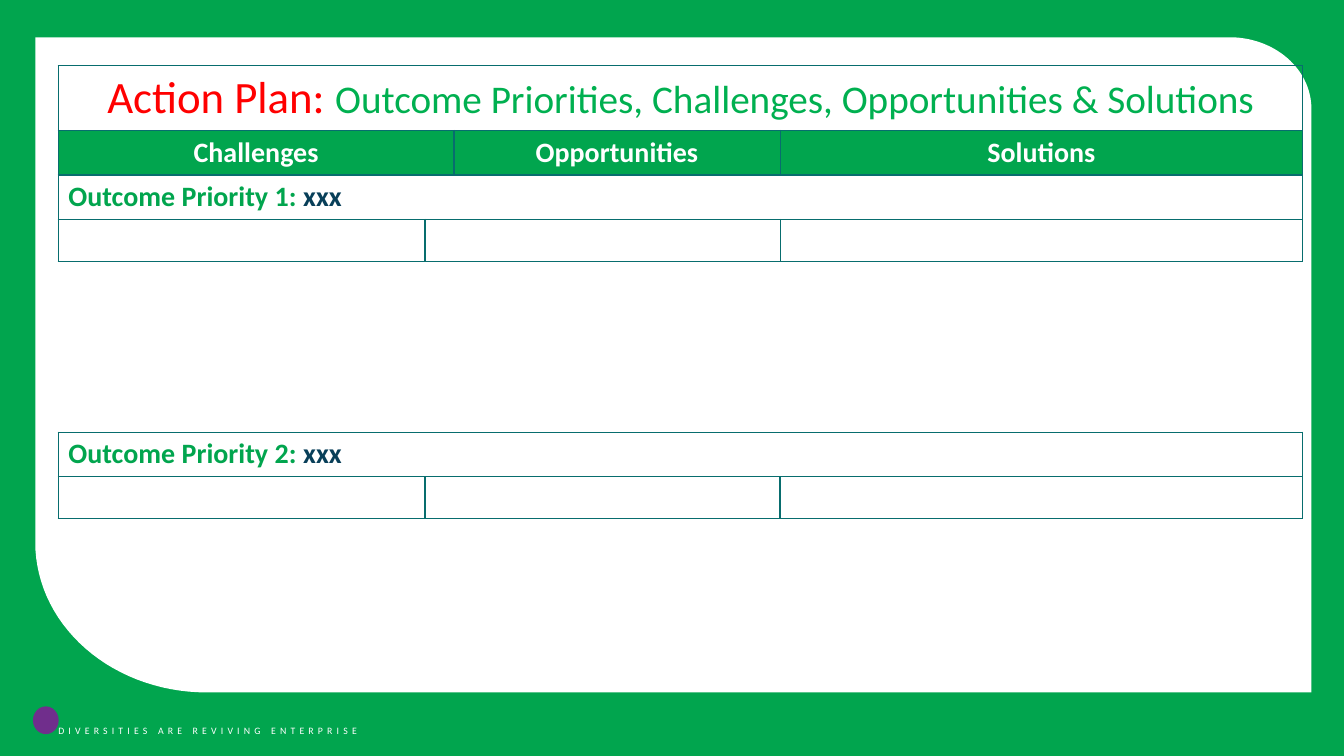
from math import cos, pi, sin

from lxml.etree import SubElement
from pptx import Presentation
from pptx.dml.color import RGBColor
from pptx.enum.shapes import MSO_SHAPE as Shape
from pptx.enum.text import MSO_ANCHOR as Anchor, PP_ALIGN as Align
from pptx.oxml.ns import qn
from pptx.util import Cm, Pt

GREEN = RGBColor(0x01, 0xA5, 0x4E)
LIME = RGBColor(0x00, 0xB0, 0x50)
RED = RGBColor(0xFF, 0x00, 0x00)
NAVY = RGBColor(0x08, 0x3F, 0x59)
TEAL = RGBColor(0x08, 0x6D, 0x6E)
PLUM = RGBColor(0x70, 0x2E, 0x8C)
WHITE = RGBColor(0xFF, 0xFF, 0xFF)
FONT = "Calibri"

TAG = "DIVERSITIES ARE REVIVING ENTERPRISE"
TITLE = [("Action Plan: ", 32, RED, False),
         ("Outcome Priorities, Challenges, Opportunities & Solutions", 28, LIME, False)]
HEADS = [[(name, 20, WHITE, True)] for name in ("Challenges", "Opportunities", "Solutions")]
GOALS = [[(f"Outcome Priority {n}: ", 20, GREEN, True), ("xxx", 20, NAVY, True)]
         for n in (1, 2)]
BLANK = [[], [], []]

# Each row: height, column spans, cell runs, alignment, fill
PLAN = [
    (1.63, (4,), [TITLE], Align.CENTER, None),
    (1.12, (2, 1, 1), HEADS, Align.CENTER, GREEN),
    (1.12, (4,), GOALS[:1], Align.LEFT, None),
    (1.06, (1, 2, 1), BLANK, Align.LEFT, None),
]
NEXT = [
    (1.12, (3,), GOALS[1:], Align.LEFT, None),
    (1.06, (1, 1, 1), BLANK, Align.LEFT, None),
]
TABLES = [
    (1.66, (9.24, 0.73, 8.22, 13.17), PLAN),
    (10.89, (9.24, 8.95, 13.17), NEXT),
]
LEFT = 1.47
PANEL = (0.89, 0.94, 33.05, 17.45)
TOP_ARC = (2.06, 1.8)
LOW_ARC = (4.32, 3.78)
STEPS = 30


def paint(shape, color):
    shape.shadow.inherit = False
    shape.fill.solid()
    shape.fill.fore_color.rgb = color
    shape.line.fill.background()


def write(para, runs):
    for text, size, color, bold in runs:
        run = para.add_run()
        run.text = text
        font = run.font
        font.name, font.size, font.bold = FONT, Pt(size), bold
        font.color.rgb = color


def arc(x, y, radii, start):
    turns = [start + pi / 2 * i / STEPS for i in range(STEPS + 1)]
    return [(Cm(x + radii[0] * cos(t)), Cm(y + radii[1] * sin(t))) for t in turns]


def panel(shapes):
    left, top, right, low = PANEL
    upper = arc(right - TOP_ARC[0], top + TOP_ARC[1], TOP_ARC, -pi / 2)
    lower = arc(left + LOW_ARC[0], low - LOW_ARC[1], LOW_ARC, pi / 2)
    start = (Cm(left), Cm(top))
    path = shapes.build_freeform(*start)
    path.add_line_segments(upper + [(Cm(right), Cm(low))] + lower, close=True)
    paint(path.convert_to_shape(), WHITE)


def frame(cell):
    props = cell._tc.get_or_add_tcPr()
    for side in ("a:lnL", "a:lnR", "a:lnT", "a:lnB"):
        line = SubElement(props, qn(side), w=str(Pt(1)))
        fill = SubElement(line, qn("a:solidFill"))
        SubElement(fill, qn("a:srgbClr"), val=str(TEAL))


def table(shapes, top, widths, rows):
    high = sum(row[0] for row in rows)
    grid = shapes.add_table(len(rows), len(widths), Cm(LEFT), Cm(top),
                            Cm(sum(widths)), Cm(high)).table
    grid.first_row = grid.horz_banding = False
    for col, width in zip(grid.columns, widths):
        col.width = Cm(width)
    for cell in grid.iter_cells():
        frame(cell)
        cell.fill.background()
    for r, (height, spans, texts, align, color) in enumerate(rows):
        grid.rows[r].height = Cm(height)
        c = 0
        for span, runs in zip(spans, texts):
            cell = grid.cell(r, c)
            if span > 1:
                cell.merge(grid.cell(r, c + span - 1))
            if color:
                cell.fill.solid()
                cell.fill.fore_color.rgb = color
            if align == Align.CENTER:
                cell.vertical_anchor = Anchor.MIDDLE
            para = cell.text_frame.paragraphs[0]
            para.alignment = align
            write(para, runs)
            c += span


def footer(shapes):
    mark = shapes.add_shape(Shape.OVAL, Cm(0.83), Cm(17.8), Cm(0.65), Cm(0.7))
    paint(mark, PLUM)
    text = shapes.add_textbox(Cm(1.22), Cm(17.91), Cm(11.18), Cm(1.02)).text_frame
    text.word_wrap = True
    text.vertical_anchor = Anchor.MIDDLE
    para = text.paragraphs[0]
    write(para, [(TAG, 7, WHITE, False)])
    para.runs[0]._r.get_or_add_rPr().set("spc", "300")


def main():
    deck = Presentation()
    deck.slide_width, deck.slide_height = Cm(33.87), Cm(19.05)
    shapes = deck.slides.add_slide(deck.slide_layouts[6]).shapes
    back = shapes.add_shape(Shape.RECTANGLE, 0, 0, deck.slide_width, deck.slide_height)
    paint(back, GREEN)
    panel(shapes)
    footer(shapes)
    for top, widths, rows in TABLES:
        table(shapes, top, widths, rows)
    deck.save("out.pptx")


if __name__ == "__main__":
    main()
